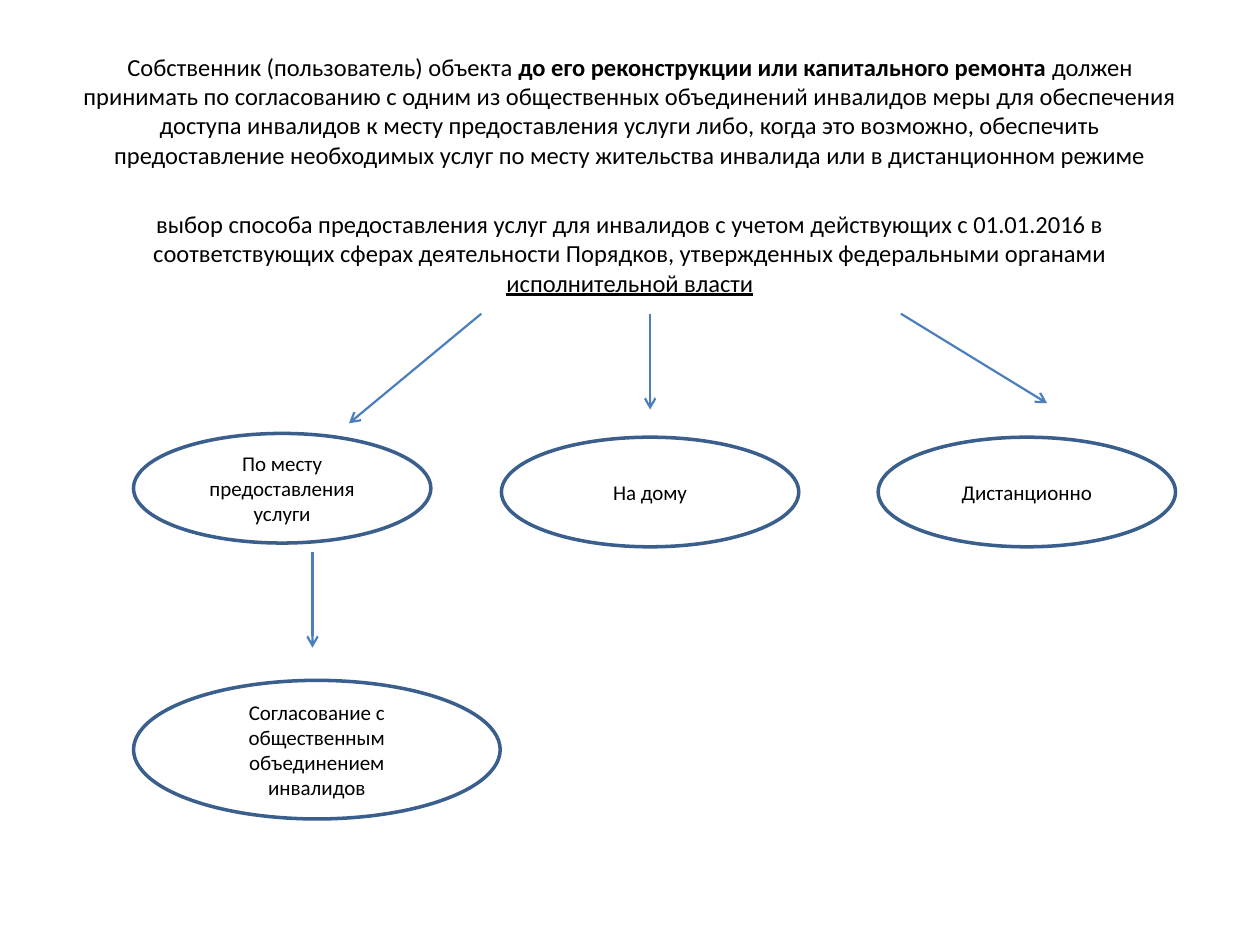
from lxml import etree
from pptx import Presentation
from pptx import util as u
from pptx.dml.color import RGBColor
from pptx.enum import shapes, text
from pptx.oxml.ns import qn

FONT = "Calibri"
BLACK, WHITE, OUTLINE, ARROW = "000000", "FFFFFF", "3A5F8C", "4B7EBC"

DUTY = [
    ("Собственник (пользователь) объекта ", {}),
    ("до его реконструкции или капитального ремонта ", {"bold": True}),
    ("должен принимать по согласованию с одним из общественных объединений "
     "инвалидов меры для обеспечения доступа инвалидов к месту предоставления "
     "услуги либо, когда это возможно, обеспечить предоставление необходимых "
     "услуг по месту жительства инвалида или в дистанционном режиме", {}),
]
CHOICE = [
    ("выбор способа предоставления услуг для инвалидов с учетом действующих "
     "с 01.01.2016 в соответствующих сферах деятельности Порядков, "
     "утвержденных федеральными органами ", {}),
    ("исполнительной власти", {"underline": True}),
]
OVALS = [
    ("По месту предоставления услуги", 1.06, 3.44, 2.36, 0.87),
    ("На дому", 3.98, 3.47, 2.36, 0.87),
    ("Дистанционно", 6.97, 3.47, 2.36, 0.87),
    ("Согласование с общественным объединением инвалидов", 1.06, 5.4, 2.91, 1.1),
]
ARROWS = [
    (5.16, 2.49, 5.16, 3.25),
    (3.82, 2.49, 2.77, 3.36),
    (7.15, 2.49, 8.31, 3.2),
    (2.48, 4.38, 2.48, 5.14),
]


def rgb(color):
    return RGBColor.from_string(color)


def add_run(p, words, size, **style):
    r = p.add_run()
    r.text = words
    r.font.name = FONT
    r.font.size = u.Pt(size)
    r.font.color.rgb = rgb(BLACK)
    for name, value in style.items():
        setattr(r.font, name, value)


def fill_paragraph(p, runs):
    """Centre a body paragraph, drop its bullet and add its runs."""
    p.alignment = text.PP_ALIGN.CENTER
    pPr = p._p.get_or_add_pPr()
    pPr.set("marL", "0")
    pPr.set("indent", "0")
    etree.SubElement(pPr, qn("a:buNone"))
    for words, style in runs:
        add_run(p, words, 14, **style)


def fill_body(sp):
    sp.left, sp.top = u.Inches(0.5), u.Inches(0.36)
    sp.width, sp.height = u.Inches(9), u.Inches(6.34)
    tf = sp.text_frame
    fill_paragraph(tf.paragraphs[0], DUTY)
    p = tf.add_paragraph()
    fill_paragraph(p, CHOICE)
    p.space_before = u.Pt(22.5)


def add_oval(s, words, *box):
    sp = s.shapes.add_shape(shapes.MSO_SHAPE.OVAL, *map(u.Inches, box))
    sp.shadow.inherit = False
    sp.fill.solid()
    sp.fill.fore_color.rgb = rgb(WHITE)
    sp.line.color.rgb = rgb(OUTLINE)
    sp.line.width = u.Pt(2)
    tf = sp.text_frame
    tf.word_wrap = True
    tf.vertical_anchor = text.MSO_ANCHOR.MIDDLE
    p = tf.paragraphs[0]
    p.alignment = text.PP_ALIGN.CENTER
    add_run(p, words, 12)


def add_arrow(s, *ends):
    line = s.shapes.add_connector(shapes.MSO_CONNECTOR.STRAIGHT,
                                  *map(u.Inches, ends))
    line.line.color.rgb = rgb(ARROW)
    line.line.width = u.Pt(1.25)
    etree.SubElement(line.line._get_or_add_ln(), qn("a:tailEnd"), type="arrow")
    etree.SubElement(line._element.spPr, qn("a:effectLst"))


def main():
    prs = Presentation()
    prs.slide_width, prs.slide_height = u.Inches(10), u.Inches(7.5)
    s = prs.slides.add_slide(prs.slide_layouts[1])
    title = s.shapes.title._element
    title.getparent().remove(title)
    fill_body(s.placeholders[1])
    for oval in OVALS:
        add_oval(s, *oval)
    for arrow in ARROWS:
        add_arrow(s, *arrow)
    prs.save("out.pptx")


if __name__ == "__main__":
    main()
